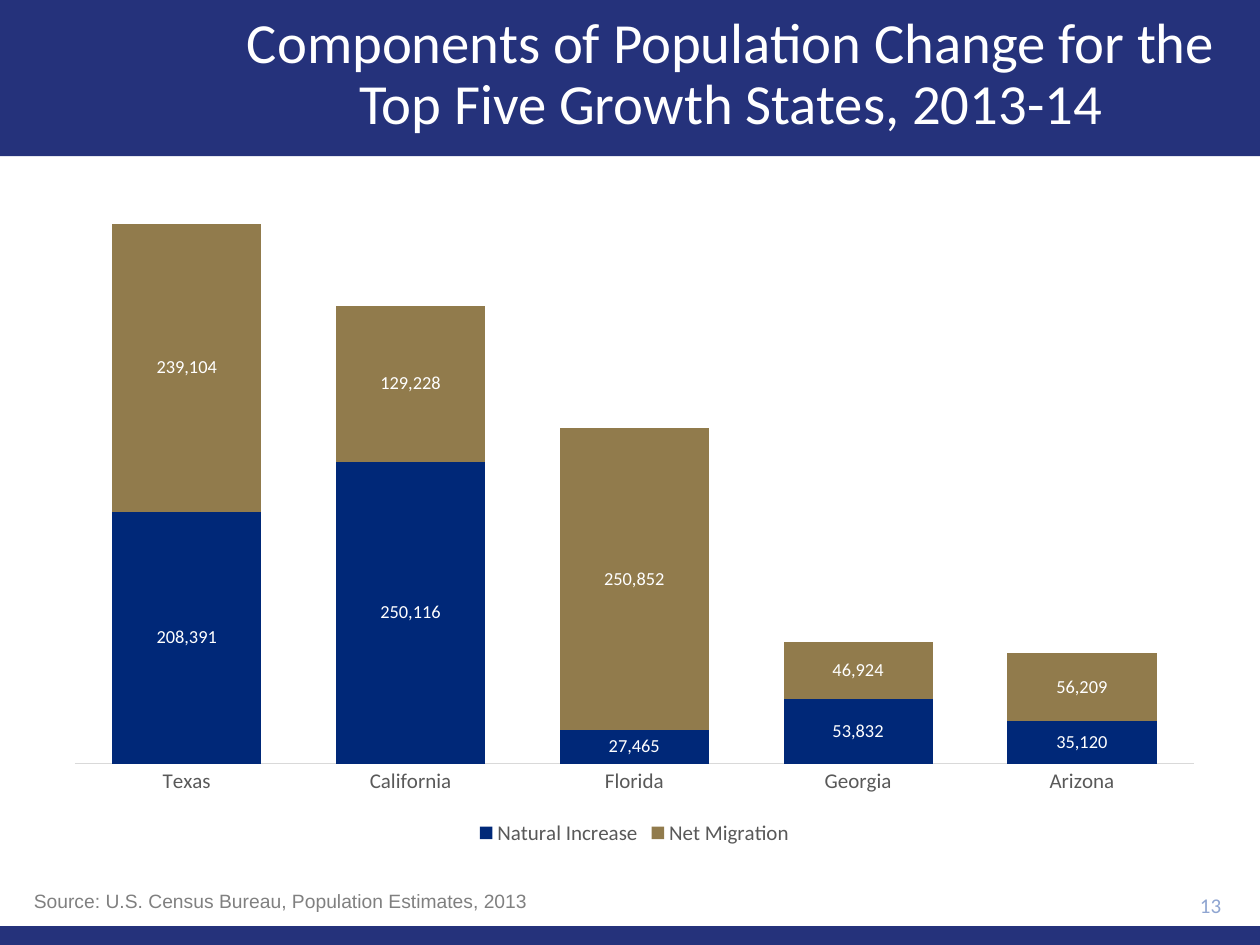
import pptx
import pptx.chart.data
from pptx.dml.color import RGBColor
from pptx.enum.chart import XL_CHART_TYPE, XL_LEGEND_POSITION, XL_TICK_MARK
from pptx.enum.shapes import MSO_SHAPE
from pptx.enum.text import MSO_ANCHOR, PP_ALIGN
from pptx.util import Inches

BAND_BLUE = RGBColor(0x25, 0x32, 0x7B)
NAVY = RGBColor(0x00, 0x28, 0x78)
BRONZE = RGBColor(0x91, 0x7B, 0x4C)
WHITE = RGBColor(0xFF, 0xFF, 0xFF)
TEXT_GRAY = RGBColor(0x59, 0x59, 0x59)
SOURCE_GRAY = RGBColor(0x80, 0x80, 0x80)
AXIS_GRAY = RGBColor(0xD9, 0xD9, 0xD9)
NUMBER_BLUE = RGBColor(0x8F, 0xA5, 0xD1)

NUMBER_FORMAT = '_(* #,##0_);_(* \\(#,##0\\);_(* "-"??_);_('
STATES = ["Texas", "California", "Florida", "Georgia", "Arizona"]
COMPONENTS = [
    ("Natural Increase", NAVY, [208391, 250116, 27465, 53832, 35120]),
    ("Net Migration", BRONZE, [239104, 129228, 250852, 46924, 56209]),
]


def set_font(font, size, color, name="Calibri"):
    font.size = pptx.util.Pt(size)
    font.name = name
    font.color.rgb = color


def add_band(page, left, top, width, height):
    band = page.shapes.add_shape(MSO_SHAPE.RECTANGLE, left, top, width, height)
    band.shadow.inherit = False
    band.fill.solid()
    band.fill.fore_color.rgb = BAND_BLUE
    band.line.fill.background()


def place_title(page, left, top, width, height):
    title = page.shapes.title
    title.left, title.top, title.width, title.height = left, top, width, height
    title.text_frame.word_wrap = True
    title.text_frame.vertical_anchor = MSO_ANCHOR.MIDDLE
    para = title.text_frame.paragraphs[0]
    para.text = "Components of Population Change for the Top Five Growth States, 2013-14"
    para.alignment = PP_ALIGN.CENTER
    para.line_spacing = 0.9
    set_font(para.font, 32.4, WHITE)
    # Bring the title in front of the header band.
    title.element.getparent().append(title.element)


def add_population_chart(page, left, top, width, height):
    data = pptx.chart.data.CategoryChartData(number_format="#,##0")
    data.categories = STATES
    for name, _, values in COMPONENTS:
        data.add_series(name, values)
    chart = page.shapes.add_chart(
        XL_CHART_TYPE.COLUMN_STACKED, left, top, width, height, data).chart
    chart.has_title = False
    set_font(chart.font, 10, RGBColor(0, 0, 0))

    chart.has_legend = True
    chart.legend.position = XL_LEGEND_POSITION.BOTTOM
    chart.legend.include_in_layout = False
    set_font(chart.legend.font, 12, TEXT_GRAY)

    states_axis = chart.category_axis
    states_axis.major_tick_mark = XL_TICK_MARK.NONE
    states_axis.format.line.color.rgb = AXIS_GRAY
    states_axis.format.line.width = pptx.util.Pt(0.75)
    set_font(states_axis.tick_labels.font, 12, TEXT_GRAY)

    people_axis = chart.value_axis
    people_axis.minimum_scale = 0
    people_axis.maximum_scale = 450000
    people_axis.has_major_gridlines = False
    people_axis.visible = False

    plot = chart.plots[0]
    plot.gap_width = 50
    plot.overlap = 100
    plot.vary_by_categories = False
    for series, (_, color, _) in zip(plot.series, COMPONENTS):
        series.format.fill.solid()
        series.format.fill.fore_color.rgb = color
        labels = series.data_labels
        labels.show_value = True
        labels.number_format = NUMBER_FORMAT
        labels.number_format_is_linked = False
        set_font(labels.font, 10.5, WHITE)


def add_text(page, left, top, width, height, text):
    """Add a wrapping text box and return its frame and paragraph."""
    box = page.shapes.add_textbox(left, top, width, height)
    frame = box.text_frame
    frame.word_wrap = True
    para = frame.paragraphs[0]
    para.text = text
    return frame, para


def add_source(page, left, top, width, height):
    _, para = add_text(page, left, top, width, height,
                       "Source: U.S. Census Bureau, Population Estimates, 2013")
    para.line_spacing = 1.15
    set_font(para.font, 11, SOURCE_GRAY, "Arial")


def add_page_number(page, left, top, width, height):
    frame, para = add_text(page, left, top, width, height, "13")
    frame.vertical_anchor = MSO_ANCHOR.MIDDLE
    para.alignment = PP_ALIGN.RIGHT
    set_font(para.font, 12, NUMBER_BLUE)


def main():
    deck = pptx.Presentation()
    deck.slide_width, deck.slide_height = Inches(10), Inches(7.5)
    page = deck.slides.add_slide(deck.slide_layouts.get_by_name("Title Only"))
    add_band(page, 0, 0, deck.slide_width, Inches(1.24))
    add_band(page, 0, Inches(7.35), deck.slide_width, Inches(0.15))
    place_title(page, Inches(1.7), Inches(0.1), Inches(8.2), Inches(1))
    add_page_number(page, Inches(8.9), Inches(7.01), Inches(0.89), Inches(0.34))
    add_population_chart(page, Inches(0.41), Inches(1.65), Inches(9.25), Inches(5.1))
    add_source(page, Inches(0.17), Inches(6.98), Inches(6.7), Inches(0.31))
    deck.save("out.pptx")


if __name__ == "__main__":
    main()
